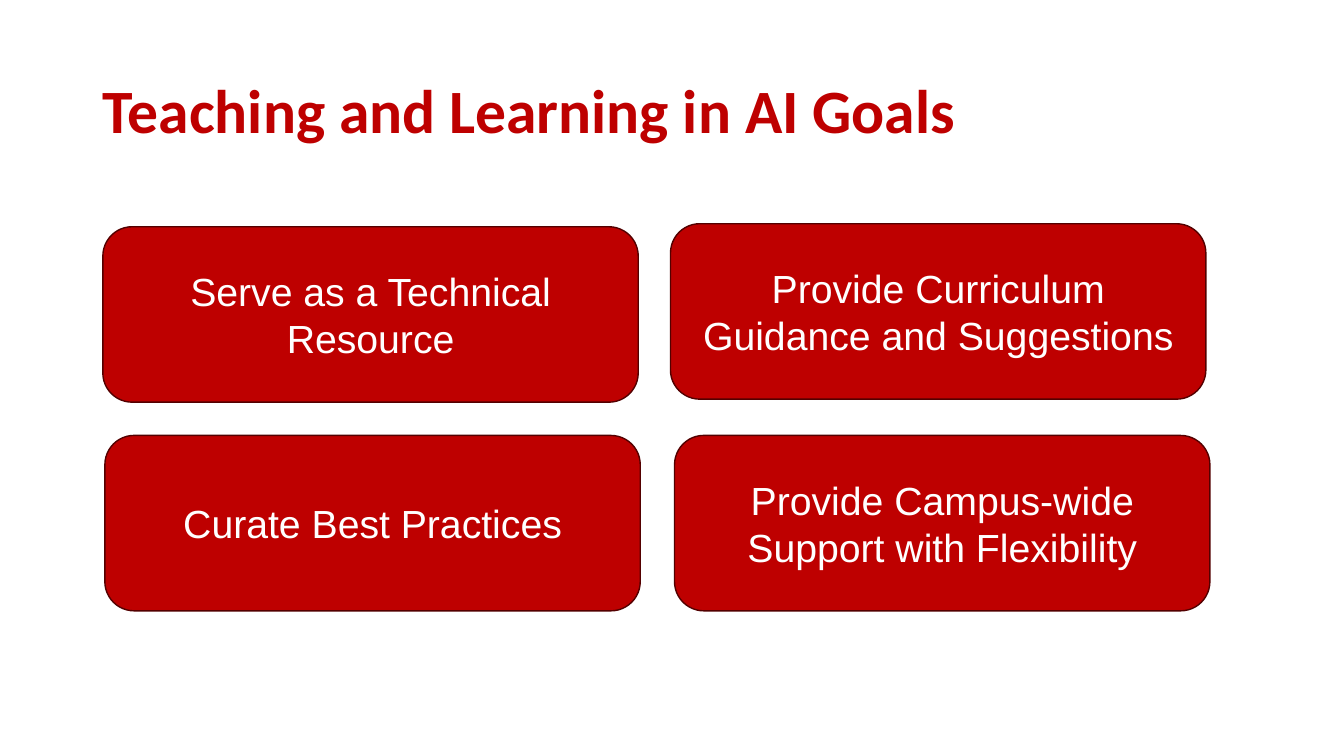
from dataclasses import dataclass

from pptx import Presentation
from pptx import util as u
from pptx.dml.color import RGBColor
from pptx.enum import shapes, text

PX = 9144  # EMU per px, 100 px to the inch


@dataclass(frozen=True)
class Theme:
    red: str = "BE0000"
    outline: str = "530000"
    white: str = "FFFFFF"
    title_font: str = "Calibri"
    body_font: str = "Arial"
    title_size: int = 44
    goal_size: int = 28


def px(*lengths):
    return [u.Emu(length * PX) for length in lengths]


def write(frame, words, *, font, size, color, bold=False,
          align=text.PP_ALIGN.LEFT, spacing=None):
    """Fill a text frame with one vertically centred paragraph."""
    frame.word_wrap = True
    frame.vertical_anchor = text.MSO_ANCHOR.MIDDLE
    paragraph = frame.paragraphs[0]
    paragraph.alignment = align
    paragraph.line_spacing = spacing
    run = paragraph.add_run()
    run.text = words
    run.font.name = font
    run.font.size = u.Pt(size)
    run.font.bold = bold
    run.font.color.rgb = RGBColor.from_string(color)


class GoalsSlide:
    def __init__(self, deck, theme):
        self.theme = theme
        self.slide = deck.slides.add_slide(deck.slide_layouts[6])

    def title(self, words, left, top, width, height):
        heading = self.slide.shapes.add_textbox(*px(left, top, width, height))
        write(heading.text_frame, words, font=self.theme.title_font,
              size=self.theme.title_size, color=self.theme.red, bold=True,
              spacing=0.9)

    def goal(self, words, left, top, width=531, height=174):
        card = self.slide.shapes.add_shape(
            shapes.MSO_SHAPE.ROUNDED_RECTANGLE, *px(left, top, width, height))
        card.shadow.inherit = False
        card.fill.solid()
        card.fill.fore_color.rgb = RGBColor.from_string(self.theme.red)
        card.line.color.rgb = RGBColor.from_string(self.theme.outline)
        card.line.width = u.Pt(1)
        write(card.text_frame, words, font=self.theme.body_font,
              size=self.theme.goal_size, color=self.theme.white,
              align=text.PP_ALIGN.CENTER)


def main():
    deck = Presentation()
    deck.slide_width, deck.slide_height = px(1333, 750)
    page = GoalsSlide(deck, Theme())
    page.title("Teaching and Learning in AI Goals", 92, 40, 1150, 145)
    goals = [
        ("Serve as a Technical Resource", 102, 225),
        ("Provide Curriculum Guidance and Suggestions", 665, 222),
        ("Curate Best Practices", 104, 432),
        ("Provide Campus-wide Support with Flexibility", 669, 432),
    ]
    for words, left, top in goals:
        page.goal(words, left, top)
    deck.save("out.pptx")


if __name__ == "__main__":
    main()
